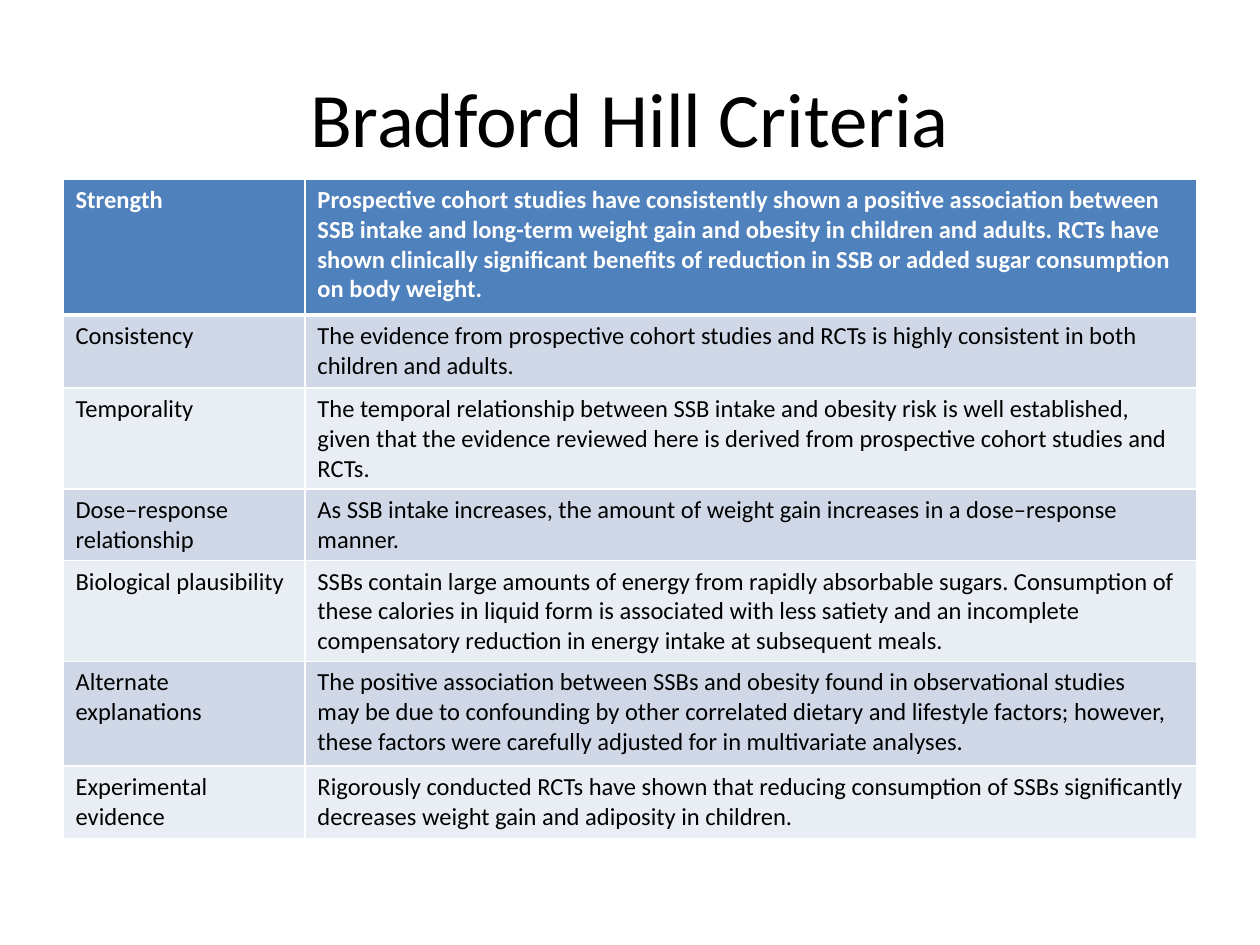
from lxml.etree import SubElement
from pptx import Presentation
from pptx.dml.color import RGBColor
from pptx.enum.text import MSO_ANCHOR, PP_ALIGN
from pptx.oxml.ns import qn
from pptx.util import Inches, Pt

COLORS = {
    "text": "000000",
    "header": "4F81BD",
    "header_text": "FFFFFF",
    "dark_band": "D0D8E8",
    "light_band": "E9EDF4",
    "border": "FFFFFF",
}
FONT = "Calibri"


def style_text(paragraph, size, color, bold=False):
    for run in paragraph.runs:
        run.font.name = FONT
        run.font.size = Pt(size)
        run.font.bold = bold
        run.font.color.rgb = RGBColor.from_string(COLORS[color])


def add_border(cell, side, width):
    line = SubElement(cell._tc.get_or_add_tcPr(), qn(f"a:{side}"), w=str(Pt(width)))
    fill = SubElement(line, qn("a:solidFill"))
    SubElement(fill, qn("a:srgbClr"), val=COLORS["border"])


prs = Presentation()
prs.slide_width = Inches(10)
prs.slide_height = Inches(7.5)
slide = prs.slides.add_slide(prs.slide_layouts[6])

# Title
title = slide.shapes.add_textbox(Inches(0.5), Inches(0.3), Inches(9), Inches(1.25))
title_frame = title.text_frame
title_frame.word_wrap = True
title_frame.vertical_anchor = MSO_ANCHOR.MIDDLE
title_frame.text = "Bradford Hill Criteria"
title_frame.paragraphs[0].alignment = PP_ALIGN.CENTER
style_text(title_frame.paragraphs[0], 44, "text")

# Criteria: row height, criterion, evidence (a line break starts a paragraph)
criteria = [
    (1.08, "Strength",
     "Prospective cohort studies have consistently shown a positive association between "
     "SSB intake and long-term weight gain and obesity in children and adults. RCTs have "
     "shown clinically significant benefits of reduction in SSB or added sugar consumption "
     "on body weight."),
    (0.58, "Consistency",
     "The evidence from prospective cohort studies and RCTs is highly consistent in both "
     "children and adults."),
    (0.75, "Temporality",
     "The temporal relationship between SSB intake and obesity risk is well established, "
     "given that the evidence reviewed here is derived from prospective cohort studies and "
     "RCTs."),
    (0.45, "Dose–response relationship",
     "As SSB intake increases, the amount of weight gain increases in a dose–response\n"
     "manner."),
    (0.8, "Biological plausibility",
     "SSBs contain large amounts of energy from rapidly absorbable sugars. Consumption of\n"
     "these calories in liquid form is associated with less satiety and an incomplete "
     "compensatory reduction in energy intake at subsequent meals."),
    (0.83, "Alternate explanations",
     "The positive association between SSBs and obesity found in observational studies\n"
     "may be due to confounding by other correlated dietary and lifestyle factors; however, "
     "these factors were carefully adjusted for in multivariate analyses."),
    (0.58, "Experimental evidence",
     "Rigorously conducted RCTs have shown that reducing consumption of SSBs significantly\n"
     "decreases weight gain and adiposity in children."),
]

# Table
table_height = sum(height for height, _, _ in criteria)
table = slide.shapes.add_table(
    len(criteria), 2, Inches(0.5), Inches(1.42), Inches(9), Inches(table_height)
).table
for column, width in zip(table.columns, (1.92, 7.08)):
    column.width = Inches(width)

for row_index, (height, *texts) in enumerate(criteria):
    table.rows[row_index].height = Inches(height)
    is_header = row_index == 0
    band = "header" if is_header else ("light_band", "dark_band")[row_index % 2]
    for column_index, text in enumerate(texts):
        cell = table.cell(row_index, column_index)
        cell.text_frame.text = text
        for paragraph in cell.text_frame.paragraphs:
            style_text(paragraph, 14, "header_text" if is_header else "text", is_header)
        # The rule below the header row is thicker
        add_border(cell, "lnL", 1)
        add_border(cell, "lnR", 1)
        add_border(cell, "lnT", 3 if row_index == 1 else 1)
        add_border(cell, "lnB", 3 if is_header else 1)
        cell.fill.solid()
        cell.fill.fore_color.rgb = RGBColor.from_string(COLORS[band])

prs.save("out.pptx")
